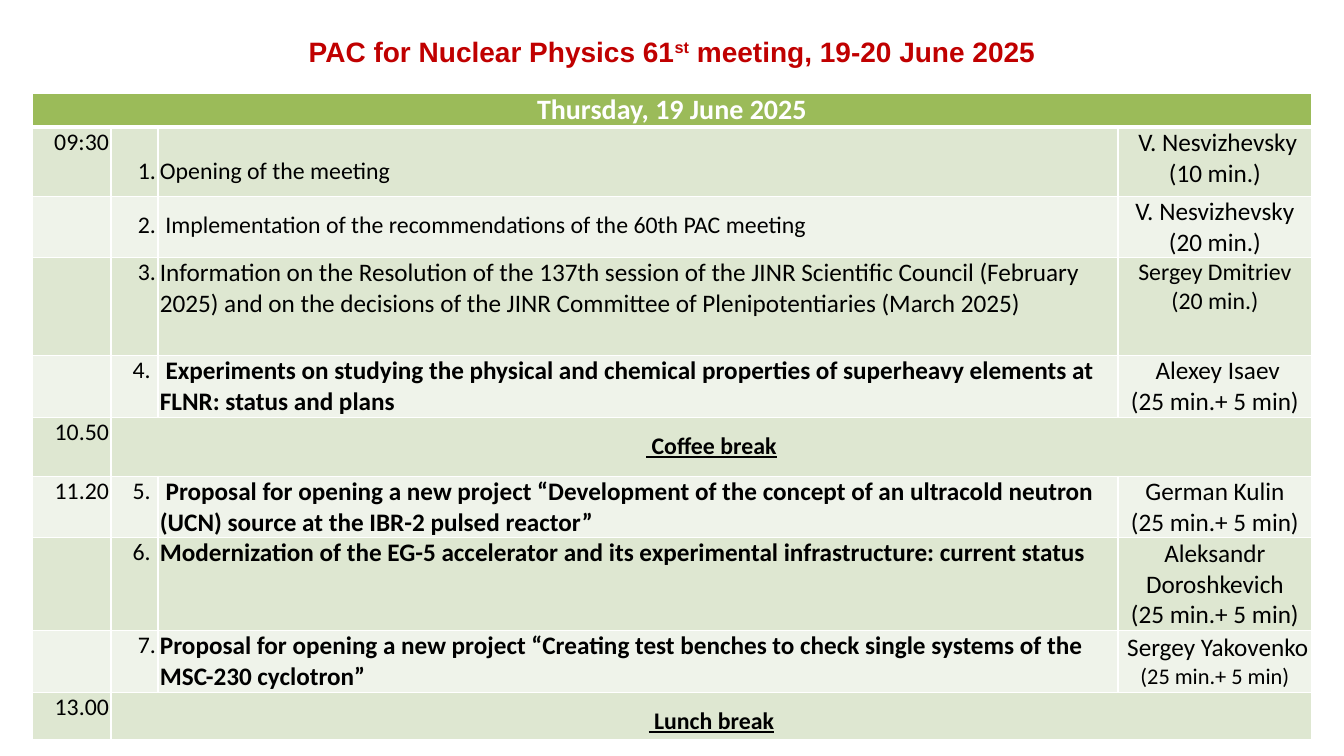
from dataclasses import dataclass

from lxml import etree
from pptx import Presentation
from pptx import util as u
from pptx.dml.color import RGBColor
from pptx.enum import text
from pptx.oxml import ns

WHITE = RGBColor(0xFF, 0xFF, 0xFF)
BLACK = RGBColor(0, 0, 0)
RED = RGBColor(0xC0, 0, 0)
GREEN = RGBColor(0x9B, 0xBB, 0x59)
BANDS = [RGBColor(0xEF, 0xF3, 0xEA), RGBColor(0xDE, 0xE7, 0xD1)]

LEFT, CENTER, RIGHT = text.PP_ALIGN.LEFT, text.PP_ALIGN.CENTER, text.PP_ALIGN.RIGHT
COLUMNS = [79, 47, 960, 194]
HEADER_HEIGHT = 34


@dataclass
class Item:
    height: int
    time: str = ""
    number: str = ""
    topic: str = ""
    speaker: str = ""
    sizes: tuple = (18, 18)
    topic_size: int = 18
    bold: bool = True
    spacing: float = 1.0
    centered: bool = True


@dataclass
class Break:
    height: int
    time: str
    label: str


AGENDA = [
    Item(69, "09:30", "1.", "Opening of the meeting", " V. Nesvizhevsky\n(10 min.)",
         topic_size=17, bold=False, spacing=2.0, centered=False),
    Item(61, "", "2.", " Implementation of the recommendations of the 60th PAC meeting",
         "V. Nesvizhevsky\v(20 min.)",
         topic_size=17, bold=False, spacing=1.5, centered=False),
    Item(98, "", "3.", "Information on the Resolution of the 137th session of the JINR "
         "Scientific Council (February 2025) and on the decisions of the JINR "
         "Committee of Plenipotentiaries (March 2025)", "Sergey Dmitriev\n(20 min.)",
         sizes=(17, 17), bold=False, centered=False),
    Item(61, "", "4. ", " Experiments on studying the physical and chemical properties of "
         "superheavy elements at FLNR: status and plans", " Alexey Isaev\n(25 min.+ 5 min)"),
    Break(59, "10.50", " Coffee break"),
    Item(61, "11.20", "5. ", " Proposal for opening a new project “Development of the concept "
         "of an ultracold neutron (UCN) source at the IBR-2 pulsed reactor”",
         "German Kulin\n(25 min.+ 5 min)"),
    Item(93, "", "6. ", "Modernization of the EG-5 accelerator and its experimental "
         "infrastructure: current status", "Aleksandr Doroshkevich\n(25 min.+ 5 min)"),
    Item(61, "", "7.", "Proposal for opening a new project “Creating test benches to check "
         "single systems of the MSC-230 cyclotron”", " Sergey Yakovenko\n(25 min.+ 5 min)",
         sizes=(18, 16)),
    Break(47, "13.00", " Lunch break"),
]


def px(length):
    return u.Emu(round(length * 914400 / 100.8))


def style_font(font, name, size, color, bold=False, underline=False):
    font.name = name
    font.size = u.Pt(size)
    font.color.rgb = color
    font.bold = bold
    font.underline = underline


def add_title(slide):
    title = slide.shapes.title
    title.left, title.top, title.width, title.height = px(32), px(29), px(1280), px(44)
    para = title.text_frame.paragraphs[0]
    para.alignment = CENTER
    for words, raised in [("PAC for Nuclear Physics 61", False), ("st", True),
                          (" meeting, 19-20 June 2025", False)]:
        span = para.add_run()
        span.text = words
        style_font(span.font, "Arial", 20, RED, bold=True)
        if raised:
            span.font._element.set("baseline", "30000")


def paint_cell(cell, color, bottom=1):
    """Set white borders, the fill and narrow margins."""
    properties = cell._tc.get_or_add_tcPr()
    for side, width in [("L", 1), ("R", 1), ("T", 1), ("B", bottom)]:
        line = etree.SubElement(properties, ns.qn(f"a:ln{side}"), w=str(u.Pt(width)))
        fill = etree.SubElement(line, ns.qn("a:solidFill"))
        etree.SubElement(fill, ns.qn("a:srgbClr"), val=str(WHITE))
    cell.fill.solid()
    cell.fill.fore_color.rgb = color
    cell.margin_left = cell.margin_right = px(2)
    cell.margin_top = cell.margin_bottom = 0


def write_cell(cell, words, align, sizes=(17,), color=BLACK, bold=False,
               underline=False, spacing=1.0):
    cell.text_frame.text = words
    for para, size in zip(cell.text_frame.paragraphs, sizes):
        para.alignment = align
        if spacing != 1:
            para.line_spacing = spacing
        for span in para.runs:
            style_font(span.font, "Calibri", size, color, bold, underline)


def fill_item(cells, item):
    _, number, topic, speaker = cells
    write_cell(number, item.number, RIGHT, spacing=item.spacing)
    write_cell(topic, item.topic, LEFT, (item.topic_size,), bold=item.bold,
               spacing=item.spacing)
    write_cell(speaker, item.speaker, CENTER, item.sizes)
    if item.centered:
        speaker.vertical_anchor = text.MSO_ANCHOR.MIDDLE
        speaker.margin_left = speaker.margin_right = 0


def fill_break(cells, pause):
    cells[1].merge(cells[3])
    write_cell(cells[1], pause.label, CENTER, bold=True, underline=True, spacing=1.5)


def add_agenda(slide):
    heights = [HEADER_HEIGHT] + [entry.height for entry in AGENDA]
    table = slide.shapes.add_table(len(heights), len(COLUMNS), px(32), px(93),
                                   px(sum(COLUMNS)), px(sum(heights))).table
    table.first_row = table.horz_banding = False
    for column, width in zip(table.columns, COLUMNS):
        column.width = px(width)
    for row, height in zip(table.rows, heights):
        row.height = px(height)

    # Day header
    header = list(table.rows[0].cells)
    for cell in header:
        paint_cell(cell, GREEN, bottom=3)
    header[0].merge(header[-1])
    write_cell(header[0], "Thursday, 19 June 2025", CENTER, (20,), WHITE, bold=True)

    # Talks and breaks
    for index, entry in enumerate(AGENDA, start=1):
        cells = list(table.rows[index].cells)
        for cell in cells:
            paint_cell(cell, BANDS[index % 2])
        if entry.time:
            write_cell(cells[0], entry.time, RIGHT)
        if isinstance(entry, Break):
            fill_break(cells, entry)
        else:
            fill_item(cells, entry)


def main():
    deck = Presentation()
    deck.slide_width, deck.slide_height = px(1344), px(756)
    slide = deck.slides.add_slide(deck.slide_layouts[5])
    add_agenda(slide)
    add_title(slide)
    deck.save("out.pptx")


if __name__ == "__main__":
    main()
